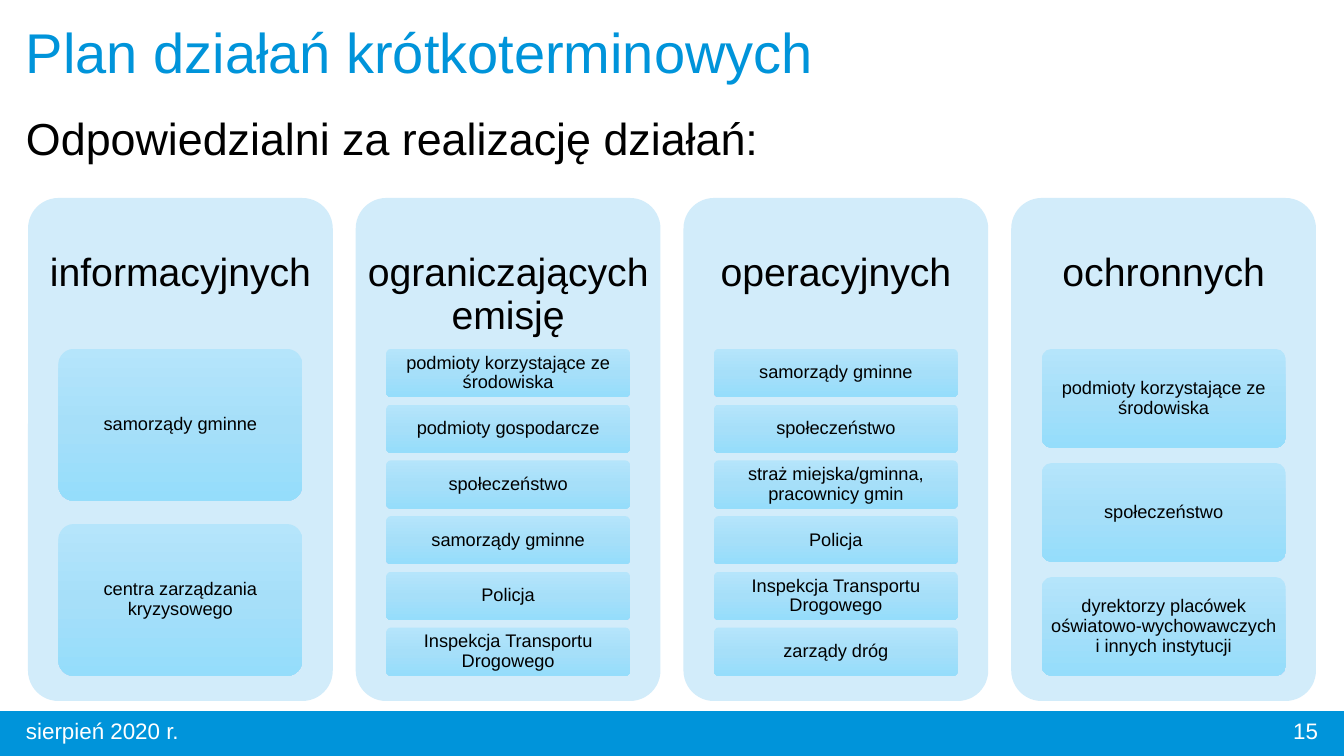
from dataclasses import dataclass
from copy import deepcopy

from pptx import Presentation
from pptx.dml.color import RGBColor
from pptx.enum.shapes import MSO_SHAPE
from pptx.enum.text import MSO_ANCHOR, MSO_AUTO_SIZE, PP_ALIGN
from pptx.oxml.ns import qn
from pptx.util import Pt

RECTANGLE, ROUNDED = MSO_SHAPE.RECTANGLE, MSO_SHAPE.ROUNDED_RECTANGLE
TOP, MIDDLE = MSO_ANCHOR.TOP, MSO_ANCHOR.MIDDLE
LEFT, CENTER, RIGHT = PP_ALIGN.LEFT, PP_ALIGN.CENTER, PP_ALIGN.RIGHT
NO_AUTOFIT = MSO_AUTO_SIZE.NONE

SLIDE_WIDTH, SLIDE_HEIGHT = 1344, 756
EMU_PER_PX = 12192000 / SLIDE_WIDTH


@dataclass(frozen=True)
class Theme:
    font: str = "Arial"
    accent: str = "0094DA"
    text: str = "000000"
    light: str = "FFFFFF"
    panel: str = "D2ECFA"
    card_stops: tuple = ((0, "B5E5FB"), (0.5, "A6DFF9"), (1, "95DDFB"))
    title_size: int = 40
    subtitle_size: int = 32
    heading_size: int = 28
    footer_size: int = 16
    card_size: int = 13


THEME = Theme()

GROUPS = [
    ("informacyjnych", ["samorządy gminne", "centra zarządzania kryzysowego"]),
    ("ograniczających emisję", [
        "podmioty korzystające ze środowiska", "podmioty gospodarcze",
        "społeczeństwo", "samorządy gminne", "Policja",
        "Inspekcja Transportu Drogowego"]),
    ("operacyjnych", [
        "samorządy gminne", "społeczeństwo",
        "straż miejska/gminna, pracownicy gmin", "Policja",
        "Inspekcja Transportu Drogowego", "zarządy dróg"]),
    ("ochronnych", [
        "podmioty korzystające ze środowiska", "społeczeństwo",
        "dyrektorzy placówek oświatowo-wychowawczych i innych instytucji"]),
]


def px(length):
    return round(length * EMU_PER_PX)


def set_frame(frame, anchor, insets=(10, 5, 10, 5)):
    frame.word_wrap = True
    frame.auto_size = NO_AUTOFIT
    frame.vertical_anchor = anchor
    (frame.margin_left, frame.margin_top,
     frame.margin_right, frame.margin_bottom) = map(px, insets)


def set_paragraph(paragraph, text, size, color, align, spacing=0.9):
    paragraph.text = text
    paragraph.alignment = align
    paragraph.line_spacing = spacing
    paragraph.space_before = Pt(0)
    paragraph.font.name = THEME.font
    paragraph.font.size = Pt(size)
    paragraph.font.color.rgb = RGBColor.from_string(color)


def add_block(slide, kind, box):
    shape = slide.shapes.add_shape(kind, *map(px, box))
    shape.shadow.inherit = False
    shape.line.fill.background()
    if kind == ROUNDED:
        shape.adjustments[0] = 0.1
    return shape


def add_label(slide, box, text, size, color, align, anchor, **options):
    label = slide.shapes.add_textbox(*map(px, box))
    set_frame(label.text_frame, anchor, **options)
    set_paragraph(label.text_frame.paragraphs[0], text, size, color, align)


def fill_card(shape):
    shape.fill.gradient()
    shape.fill.gradient_angle = 270
    stop_list = shape._element.spPr.find(".//" + qn("a:gsLst"))
    stop_list.append(deepcopy(stop_list[0]))
    for stop, (position, color) in zip(shape.fill.gradient_stops, THEME.card_stops):
        stop.position = position
        stop.color.rgb = RGBColor.from_string(color)


def add_title(slide, box):
    title = slide.shapes.title
    title.left, title.top, title.width, title.height = map(px, box)
    frame = title.text_frame
    set_frame(frame, MIDDLE, (10, 12, 10, 5))
    set_paragraph(frame.paragraphs[0], "Plan działań krótkoterminowych",
                  THEME.title_size, THEME.accent, LEFT)
    subtitle = frame.add_paragraph()
    set_paragraph(subtitle, "Odpowiedzialni za realizację działań:",
                  THEME.subtitle_size, THEME.text, LEFT)
    subtitle.space_before = Pt(22)


def add_cards(slide, box, names):
    left, top, width, height = box
    gap_ratio = 2 / 13
    card_height = height / (len(names) + (len(names) - 1) * gap_ratio)
    for index, name in enumerate(names):
        card_top = top + index * card_height * (1 + gap_ratio)
        card = add_block(slide, ROUNDED, (left, card_top, width, card_height))
        fill_card(card)
        set_frame(card.text_frame, MIDDLE, (4, 3, 4, 3))
        set_paragraph(card.text_frame.paragraphs[0], name,
                      THEME.card_size, THEME.text, CENTER)


def add_group(slide, box, heading, names):
    left, top, width, height = box
    panel = add_block(slide, ROUNDED, box)
    panel.fill.solid()
    panel.fill.fore_color.rgb = RGBColor.from_string(THEME.panel)
    heading_height = height * 0.3
    add_label(slide, (left, top, width, heading_height), heading,
              THEME.heading_size, THEME.text, CENTER, TOP, insets=(6, 55, 6, 0))
    add_cards(slide, (left + width * 0.1, top + heading_height,
                      width * 0.8, height * 0.65), names)


def add_groups(slide, box):
    left, top, width, height = box
    gap = 23
    panel_width = (width - gap * (len(GROUPS) - 1)) / len(GROUPS)
    for index, (heading, names) in enumerate(GROUPS):
        panel_left = left + index * (panel_width + gap)
        add_group(slide, (panel_left, top, panel_width, height), heading, names)


def add_footer(slide, box):
    left, top, width, height = box
    accent = RGBColor.from_string(THEME.accent)
    bar = add_block(slide, RECTANGLE, box)
    bar.fill.solid()
    bar.fill.fore_color.rgb = accent
    bar.line.color.rgb = accent
    bar.line.width = Pt(1)
    margin = 16
    text_height = height - 3
    date_width, number_width = 403, 302
    number_left = left + width - margin - number_width
    for label_left, label_width, text, align in (
            (left + margin, date_width, "sierpień 2020 r.", LEFT),
            (number_left, number_width, "15", RIGHT)):
        add_label(slide, (label_left, top, label_width, text_height), text,
                  THEME.footer_size, THEME.light, align, MIDDLE)


def main():
    presentation = Presentation()
    presentation.slide_width = px(SLIDE_WIDTH)
    presentation.slide_height = px(SLIDE_HEIGHT)
    title_only = presentation.slide_layouts[5]
    slide = presentation.slides.add_slide(title_only)
    add_footer(slide, (0, 712, SLIDE_WIDTH, 44))
    add_title(slide, (16, 10, 1030, 163))
    add_groups(slide, (28, 198, 1288, 503))
    presentation.save("out.pptx")


if __name__ == "__main__":
    main()
